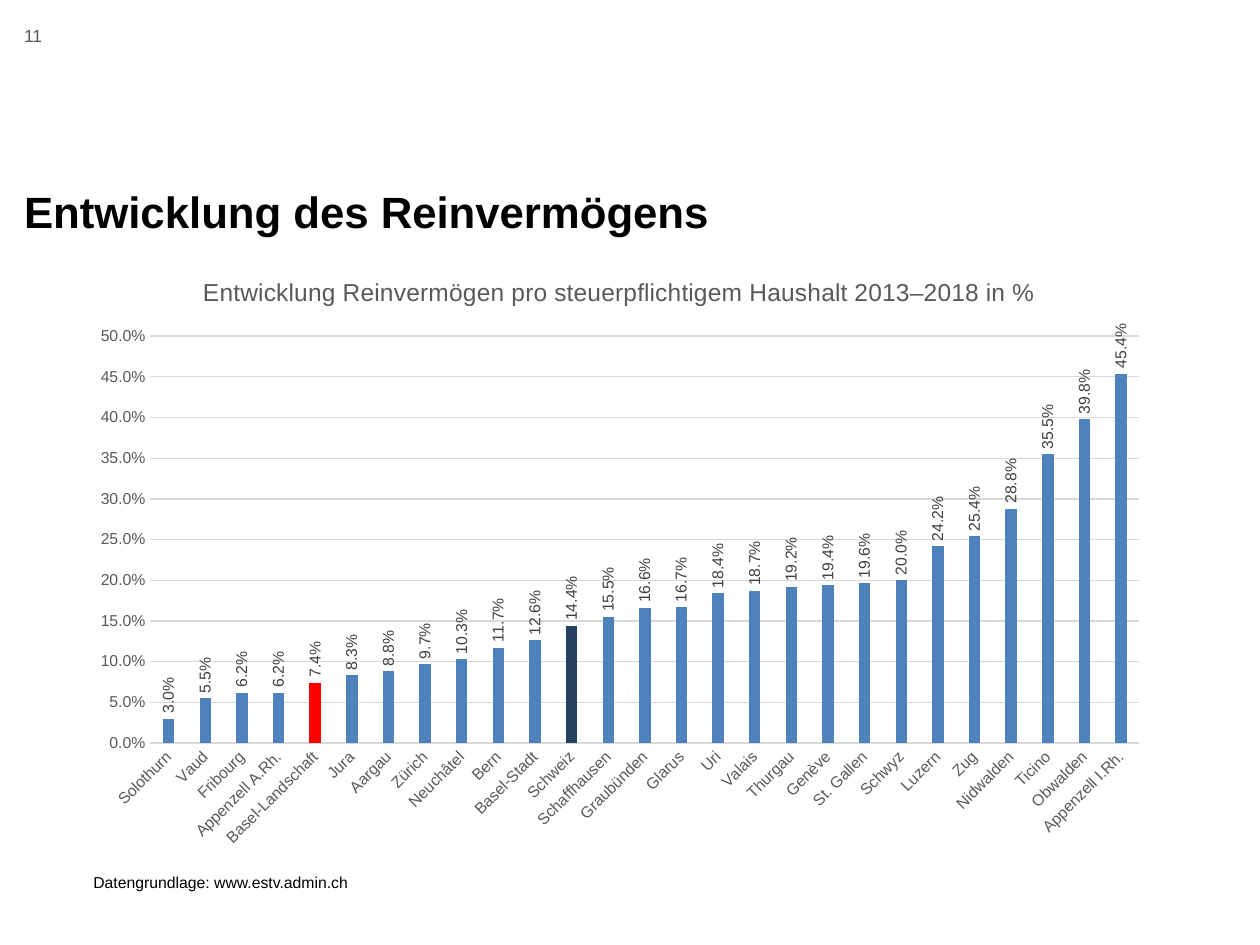
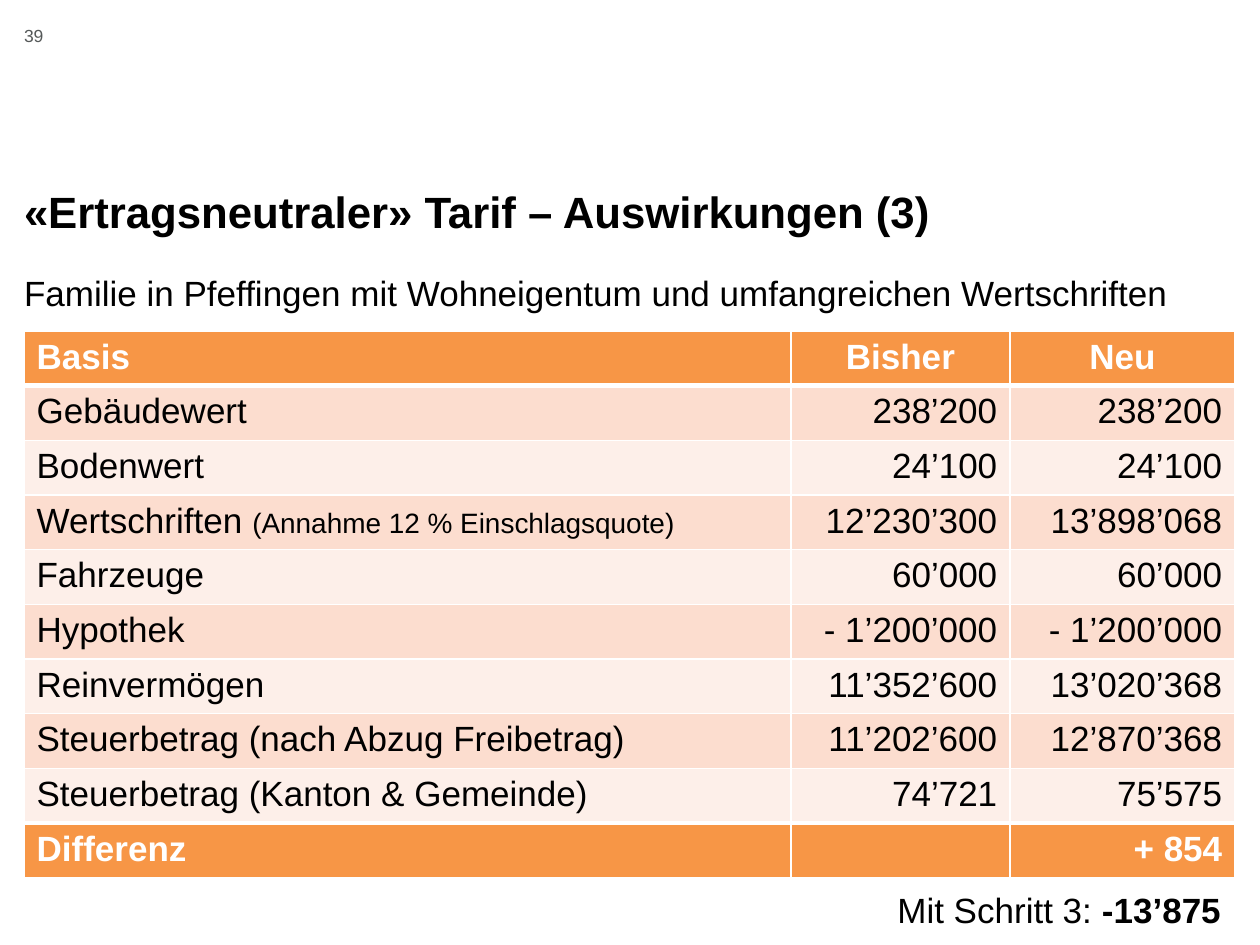
"""Build two slides on net wealth and the effects of a new tax tariff."""
from dataclasses import dataclass, replace

from lxml.etree import SubElement
from pptx import Presentation
from pptx.chart.data import CategoryChartData
from pptx.dml.color import RGBColor
from pptx.enum.chart import XL_CHART_TYPE, XL_LABEL_POSITION, XL_TICK_MARK
from pptx.enum.text import MSO_ANCHOR, MSO_AUTO_SIZE, PP_ALIGN
from pptx.oxml import parse_xml
from pptx.oxml.ns import nsdecls, qn
from pptx.util import Emu, Pt

SCALE = 914400 / 126
FACE = "Arial"
BLACK = RGBColor(0x00, 0x00, 0x00)
WHITE = RGBColor(0xFF, 0xFF, 0xFF)
SLATE = RGBColor(0x55, 0x59, 0x59)
GREY = RGBColor(0x59, 0x59, 0x59)
DARK = RGBColor(0x40, 0x40, 0x40)
PALE = RGBColor(0xD9, 0xD9, 0xD9)
BLUE = RGBColor(0x4F, 0x81, 0xBD)
NAVY = RGBColor(0x25, 0x40, 0x61)
RED = RGBColor(0xFF, 0x00, 0x00)
ORANGE = RGBColor(0xF7, 0x96, 0x46)
BANDS = (RGBColor(0xFC, 0xDD, 0xCF), RGBColor(0xFD, 0xEF, 0xE9))


@dataclass(frozen=True)
class Box:
    """Place and size in px."""
    left: int
    top: int
    width: int
    height: int

    def emu(self) -> tuple:
        """Return the four lengths in EMU."""
        return tuple(map(px, (self.left, self.top, self.width, self.height)))


@dataclass(frozen=True)
class Style:
    """Look of a run of text."""
    size: int
    color: RGBColor = BLACK
    bold: bool = False


@dataclass(frozen=True)
class Note:
    """Free text box, with an optional bold tail."""
    box: Box
    text: str
    style: Style
    tail: str = ""
    flush: bool = False
    wrap: bool = True


TITLE = Style(25, bold=True)
BODY = Style(20)
SMALL = Style(16)
HEAD = Style(20, WHITE, True)
AXIS = Style(9, GREY)

TOP = Box(24, 134, 1211, 102)
LEAD = Box(24, 271, 1211, 650)
PAGE = Note(Box(24, 25, 55, 50), "", Style(10, SLATE), flush=True)
SOURCE = Note(Box(81, 867, 605, 31), "Datengrundlage: www.estv.admin.ch", Style(9))
STEP = Note(Box(885, 882, 350, 55), "Mit Schritt 3: ", BODY, "-13’875", wrap=False)

GROWTH = {
    "Solothurn": 0.03, "Vaud": 0.055, "Fribourg": 0.062, "Appenzell A.Rh.": 0.062,
    "Basel-Landschaft": 0.074, "Jura": 0.083, "Aargau": 0.088, "Zürich": 0.097,
    "Neuchâtel": 0.103, "Bern": 0.117, "Basel-Stadt": 0.126, "Schweiz": 0.144,
    "Schaffhausen": 0.155, "Graubünden": 0.166, "Glarus": 0.167, "Uri": 0.184,
    "Valais": 0.187, "Thurgau": 0.192, "Genève": 0.194, "St. Gallen": 0.196,
    "Schwyz": 0.2, "Luzern": 0.242, "Zug": 0.254, "Nidwalden": 0.288,
    "Ticino": 0.355, "Obwalden": 0.398, "Appenzell I.Rh.": 0.454,
}
MARKED = {"Basel-Landschaft": RED, "Schweiz": NAVY}

ROWS = (
    ("Basis", "Bisher", "Neu"),
    ("Gebäudewert", "238’200", "238’200"),
    ("Bodenwert", "24’100", "24’100"),
    ("Wertschriften ", "12’230’300", "13’898’068"),
    ("Fahrzeuge", "60’000", "60’000"),
    ("Hypothek", "- 1’200’000", "- 1’200’000"),
    ("Reinvermögen", "11’352’600", "13’020’368"),
    ("Steuerbetrag (nach Abzug Freibetrag)", "11’202’600", "12’870’368"),
    ("Steuerbetrag (Kanton & Gemeinde)", "74’721", "75’575"),
    ("Differenz", "", "+ 854"),
)
TAILS = {"Wertschriften ": "(Annahme 12 % Einschlagsquote)"}
WIDTHS = (767, 219, 225)


def px(length: int) -> Emu:
    """Turn px into EMU."""
    return Emu(round(length * SCALE))


def dress(font, style: Style) -> None:
    """Give a font its look."""
    font.name = FACE
    font.size = Pt(style.size)
    font.bold = style.bold
    font.color.rgb = style.color


def write(par, text: str, style: Style) -> None:
    """Set the text of a paragraph and format its runs."""
    par.text = text
    for run in par.runs:
        dress(run.font, style)


def append(par, text: str, style: Style) -> None:
    """Add a run with its own look."""
    run = par.add_run()
    run.text = text
    dress(run.font, style)


def flatten(frame) -> None:
    """Remove the insets of a text frame."""
    frame.margin_left = frame.margin_right = 0
    frame.margin_top = frame.margin_bottom = 0


def place(holder, box: Box, text: str, style: Style):
    """Move and fill a placeholder and return its paragraph."""
    holder.left, holder.top, holder.width, holder.height = box.emu()
    frame = holder.text_frame
    flatten(frame)
    frame.auto_size = MSO_AUTO_SIZE.NONE
    par = frame.paragraphs[0]
    write(par, text, style)
    par.alignment = PP_ALIGN.LEFT
    par.space_before = Pt(0)
    return par


def add_note(slide, note: Note) -> None:
    """Draw a free text box."""
    frame = slide.shapes.add_textbox(*note.box.emu()).text_frame
    frame.word_wrap = note.wrap
    if note.flush:
        flatten(frame)
    par = frame.paragraphs[0]
    write(par, note.text, note.style)
    if note.tail:
        append(par, note.tail, replace(note.style, bold=True))


def add_slide(deck, layout: int, title: str, page: str):
    """Add a slide with its title and page number."""
    slide = deck.slides.add_slide(deck.slide_layouts[layout])
    add_note(slide, replace(PAGE, text=page))
    place(slide.shapes.title, TOP, title, TITLE).line_spacing = 0.7
    slide.shapes.title.text_frame.vertical_anchor = MSO_ANCHOR.BOTTOM
    return slide


def turn(item, angle: int) -> None:
    """Rotate the text of an axis or of labels."""
    body = item.find(qn("c:txPr")).find(qn("a:bodyPr"))
    body.set("rot", str(angle * 60000))
    body.set("vert", "horz")


def fix_plot(chart, box: Box, plot: Box) -> None:
    """Pin the inner plot area within the chart."""
    area = chart.plots[0]._element.getparent()
    for old in area.findall(qn("c:layout")):
        area.remove(old)
    layout = parse_xml(f"<c:layout {nsdecls('c')}><c:manualLayout/></c:layout>")
    parts = {
        "layoutTarget": "inner", "xMode": "edge", "yMode": "edge",
        "x": round((plot.left - box.left) / box.width, 3),
        "y": round((plot.top - box.top) / box.height, 3),
        "w": round(plot.width / box.width, 3),
        "h": round(plot.height / box.height, 3),
    }
    for name, value in parts.items():
        SubElement(layout[0], qn(f"c:{name}")).set("val", str(value))
    area.insert(0, layout)


def add_growth(slide, box: Box, plot: Box) -> None:
    """Draw the column chart of growth by canton."""
    data = CategoryChartData(number_format="0.0%")
    data.categories = list(GROWTH)
    data.add_series("Reinvermögen", list(GROWTH.values()))
    kind = XL_CHART_TYPE.COLUMN_CLUSTERED
    chart = slide.shapes.add_chart(kind, *box.emu(), data).chart
    dress(chart.font, Style(10))
    chart.has_legend = False
    write(chart.chart_title.text_frame.paragraphs[0],
          "Entwicklung Reinvermögen pro steuerpflichtigem Haushalt 2013–2018 in %",
          Style(14, GREY))
    chart.chart_title.include_in_layout = False

    for axis in (chart.category_axis, chart.value_axis):
        axis.major_tick_mark = axis.minor_tick_mark = XL_TICK_MARK.NONE
        dress(axis.tick_labels.font, AXIS)
    cats, vals = chart.category_axis, chart.value_axis
    turn(cats._element, -45)
    vals.minimum_scale, vals.maximum_scale, vals.major_unit = 0, 0.5, 0.05
    vals.tick_labels.number_format = "0.0%"
    vals.tick_labels.number_format_is_linked = False
    vals.format.line.fill.background()
    for line in (cats.format.line, vals.major_gridlines.format.line):
        line.color.rgb = PALE
        line.width = Pt(0.75)

    bars = chart.plots[0]
    bars.gap_width, bars.overlap, bars.vary_by_categories = 219, -27, False
    series = bars.series[0]
    series.format.fill.solid()
    series.format.fill.fore_color.rgb = BLUE
    for name, color in MARKED.items():
        fill = series.points[list(GROWTH).index(name)].format.fill
        fill.solid()
        fill.fore_color.rgb = color
    labels = series.data_labels
    labels.show_value = True
    labels.position = XL_LABEL_POSITION.OUTSIDE_END
    labels.number_format = "0.0%"
    labels.number_format_is_linked = False
    dress(labels.font, Style(9, DARK))
    turn(labels._element, -90)
    fix_plot(chart, box, plot)


def edge(cell, side: str, width: int) -> None:
    """Draw one white border of a cell."""
    line = SubElement(cell._tc.get_or_add_tcPr(), qn(f"a:ln{side}"), w=str(Pt(width)))
    fill = SubElement(line, qn("a:solidFill"))
    SubElement(fill, qn("a:srgbClr"), val=str(WHITE))


def add_tariff(slide, box: Box) -> None:
    """Draw the table of old and new values."""
    last = len(ROWS) - 1
    table = slide.shapes.add_table(len(ROWS), len(WIDTHS), *box.emu()).table
    for column, width in zip(table.columns, WIDTHS):
        column.width = px(width)
    for i, texts in enumerate(ROWS):
        table.rows[i].height = px(box.height // len(ROWS))
        strong = i in (0, last)
        style = HEAD if strong else BODY
        for j, text in enumerate(texts):
            cell = table.cell(i, j)
            edge(cell, "L", 1)
            edge(cell, "R", 1)
            edge(cell, "T", 3 if i in (1, last) else 1)
            edge(cell, "B", 3 if i in (0, last - 1) else 1)
            cell.fill.solid()
            cell.fill.fore_color.rgb = ORANGE if strong else BANDS[(i - 1) % 2]
            par = cell.text_frame.paragraphs[0]
            write(par, text, style)
            if text in TAILS:
                append(par, TAILS[text], SMALL)
            if j:
                par.alignment = PP_ALIGN.RIGHT if i else PP_ALIGN.CENTER


def add_lead(slide, text: str) -> None:
    """Fill the body placeholder with one plain line."""
    par = place(slide.placeholders[1], LEAD, text, BODY)
    par.space_after = Pt(12.5)
    props = par._p.get_or_add_pPr()
    props.set("marL", "0")
    props.set("indent", "0")
    SubElement(props, qn("a:buNone"))


def main() -> None:
    """Build and save the deck."""
    deck = Presentation()
    deck.slide_width, deck.slide_height = px(1260), px(945)

    slide = add_slide(deck, 5, "Entwicklung des Reinvermögens", "11")
    add_note(slide, SOURCE)
    add_growth(slide, Box(79, 253, 1081, 612), Box(150, 336, 989, 407))

    slide = add_slide(deck, 1, "«Ertragsneutraler» Tarif – Auswirkungen (3)", "39")
    add_lead(slide, "Familie in Pfeffingen mit Wohneigentum und umfangreichen Wertschriften")
    add_tariff(slide, Box(24, 331, 1211, 517))
    add_note(slide, STEP)

    deck.save("out.pptx")


if __name__ == "__main__":
    main()
